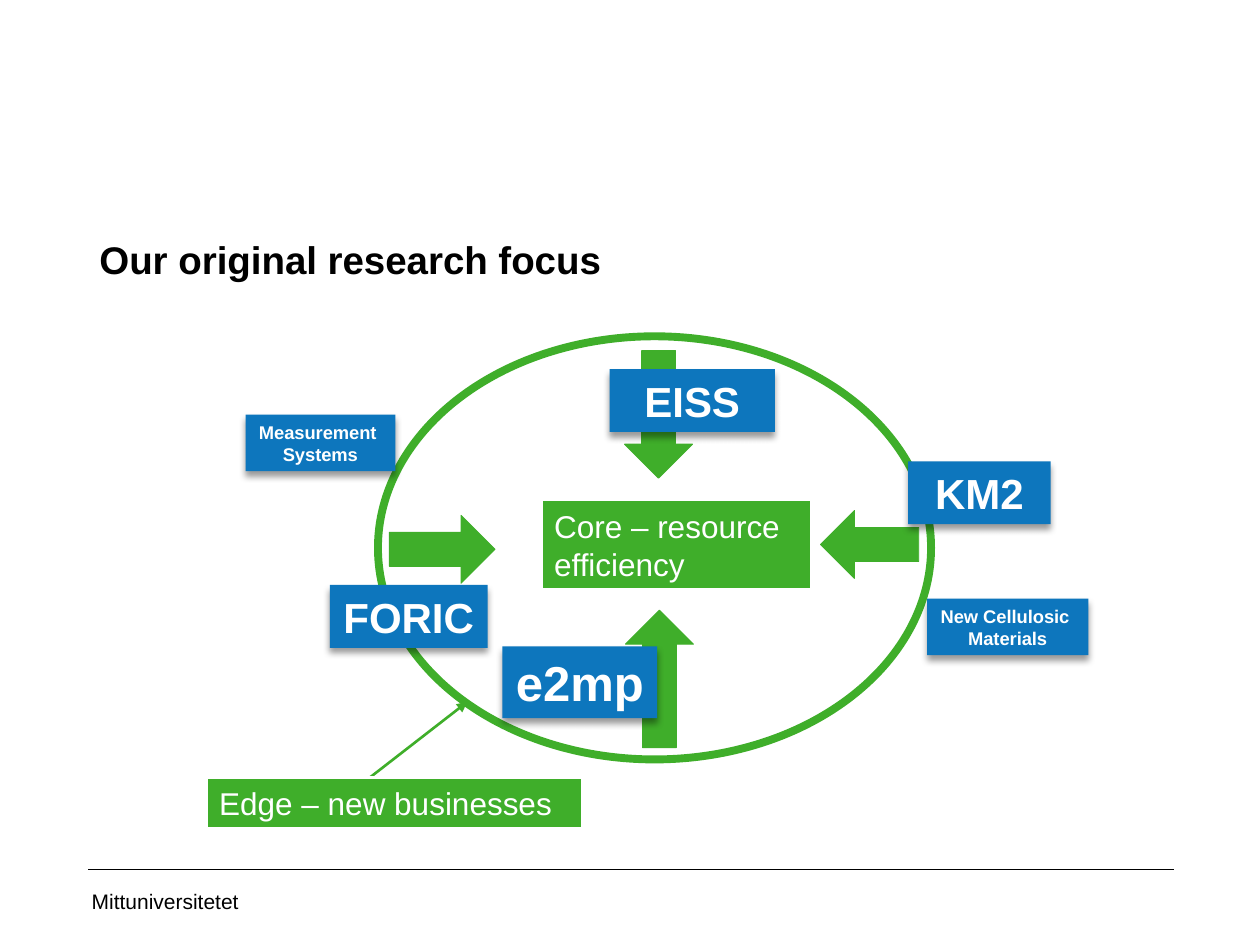
from lxml import etree
from pptx import Presentation
from pptx.dml.color import RGBColor
from pptx.enum import shapes, text
from pptx.oxml import parse_xml
from pptx.oxml.ns import qn
from pptx.util import Cm, Pt

GREEN = RGBColor(0x3F, 0xAE, 0x2A)
BLUE = RGBColor(0x0D, 0x76, 0xBD)
WHITE = RGBColor(255, 255, 255)
BLACK = RGBColor(0, 0, 0)
FONT = "Arial"
SHADE = (
    '<a:outerShdw xmlns:a="http://schemas.openxmlformats.org/drawingml/2006/main" '
    'blurRad="50800" dist="38100" dir="5400000" algn="t" rotWithShape="0">'
    '<a:srgbClr val="000000"><a:alpha val="40000"/></a:srgbClr></a:outerShdw>'
)

TITLE = "Our original research focus"
FOOT = "Mittuniversitetet"
THICK = 1.37
ARROWS = [
    (7.85, 10.39, 2.13, 0),
    (11.99, 7.67, 2.57, 90),
    (16.54, 10.29, 1.98, 180),
    (11.91, 13, 2.77, 270),
]
RING = (7.62, 6.78, 11.15, 8.53)
UNITS = [
    ("New Cellulosic \nMaterials", 10.5, (18.69, 12.07, 3.25, 1.14)),
    ("Measurement \nSystems", 10.5, (4.95, 8.36, 3.02, 1.14)),
    ("e2mp", 28, (10.13, 13.03, 3.12, 1.45)),
    ("FORIC", 24, (6.65, 11.79, 3.18, 1.27)),
    ("EISS", 24, (12.29, 7.44, 3.33, 1.27)),
    ("KM2", 24, (18.31, 9.3, 2.87, 1.27)),
]
ZONES = [
    ("Edge – new businesses", (4.17, 15.67, 7.57, 1.02)),
    ("Core – resource efficiency", (10.92, 10.08, 5.44, 1.8)),
]


def cms(box):
    return [Cm(n) for n in box]


def write(shape, words, size, color, bold=False, align=text.PP_ALIGN.LEFT):
    frame = shape.text_frame
    frame.text = words
    for para in frame.paragraphs:
        para.alignment = align
        for run in para.runs:
            font = run.font
            font.name, font.size, font.bold = FONT, Pt(size), bold
            font.color.rgb = color


def draw(slide, kind, box, fill=None, edge=None, width=0.5):
    shape = slide.shapes.add_shape(kind, *cms(box))
    shape.shadow.inherit = False
    if fill is None:
        shape.fill.background()
    else:
        shape.fill.solid()
        shape.fill.fore_color.rgb = fill
    if edge is None:
        shape.line.fill.background()
    else:
        shape.line.color.rgb = edge
        shape.line.width = Pt(width)
    return shape


def join(slide, ends, color, width):
    line = slide.shapes.add_connector(shapes.MSO_CONNECTOR.STRAIGHT, *cms(ends))
    line.line.color.rgb = color
    line.line.width = Pt(width)
    etree.SubElement(line._element.spPr, qn("a:effectLst"))
    return line


def main():
    deck = Presentation()
    deck.slide_width, deck.slide_height = Cm(25.4), Cm(19.05)
    slide = deck.slides.add_slide(deck.slide_layouts[5])
    kinds = shapes.MSO_SHAPE

    title = slide.shapes.title
    title.left, title.top, title.width, title.height = cms((1.75, 4.29, 21.95, 2.06))
    write(title, TITLE, 22, BLACK, True)
    title.text_frame.vertical_anchor = text.MSO_ANCHOR.TOP
    title.text_frame.paragraphs[0].line_spacing = Pt(36)

    foot = slide.shapes.add_textbox(*cms((1.75, 17.65, 5.72, 1.02)))
    write(foot, FOOT, 12, BLACK)
    foot.text_frame.word_wrap = True
    foot.text_frame.margin_left = Cm(0.1)
    foot.text_frame.vertical_anchor = text.MSO_ANCHOR.MIDDLE
    join(slide, (1.78, 17.53, 23.67, 17.53), BLACK, 0.25)

    for left, top, span, turn in ARROWS:
        arrow = draw(slide, kinds.RIGHT_ARROW, (left, top, span, THICK), GREEN, GREEN)
        arrow.rotation = turn
    draw(slide, kinds.OVAL, RING, edge=GREEN, width=4.5)

    for words, size, box in UNITS:
        unit = draw(slide, kinds.RECTANGLE, box, BLUE)
        unit._element.spPr.find(qn("a:effectLst")).append(parse_xml(SHADE))
        write(unit, words, size, WHITE, True, text.PP_ALIGN.CENTER)
        unit.text_frame.word_wrap = False

    link = join(slide, (7.19, 15.88, 9.42, 14.15), GREEN, 1.5)
    etree.SubElement(link.line._get_or_add_ln(), qn("a:tailEnd"), type="triangle")

    for words, box in ZONES:
        zone = draw(slide, kinds.RECTANGLE, box, GREEN, WHITE, 1.5)
        write(zone, words, 18, WHITE)

    deck.save("out.pptx")


if __name__ == "__main__":
    main()
